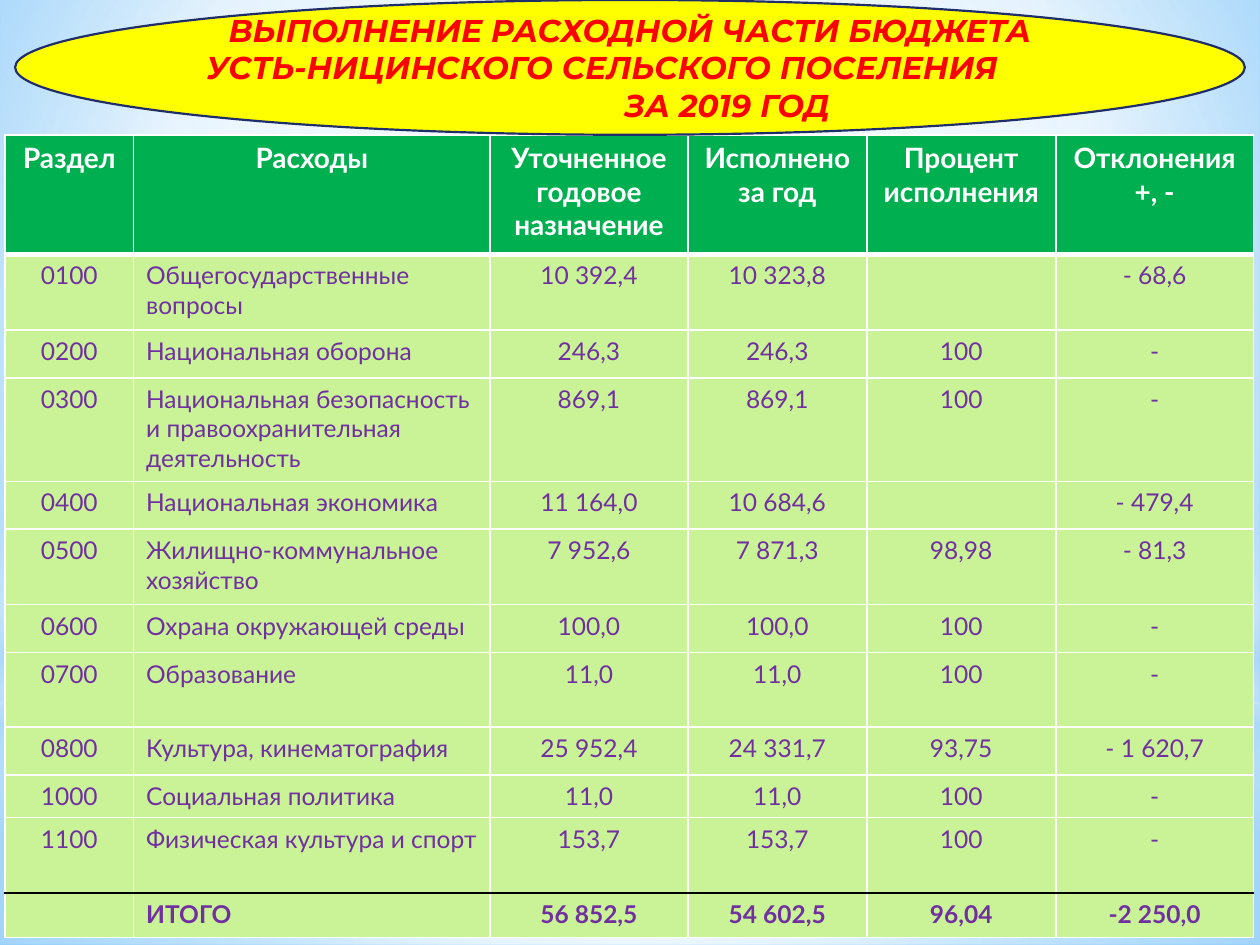
from dataclasses import dataclass

from lxml.etree import SubElement
from pptx import Presentation
from pptx.dml.color import RGBColor
from pptx.enum.shapes import MSO_SHAPE
from pptx.enum.text import MSO_ANCHOR, PP_ALIGN
from pptx.oxml import parse_xml
from pptx.oxml.ns import nsdecls, qn
from pptx.util import Inches, Pt

WHITE = RGBColor(0xFF, 0xFF, 0xFF)
BLACK = RGBColor(0x00, 0x00, 0x00)
SKY = RGBColor(0x9E, 0xD5, 0xFF)
BLUE = RGBColor(0x5B, 0xB9, 0xFF)
PALE_BLUE = RGBColor(0xB4, 0xDC, 0xFA)
GREEN = RGBColor(0x00, 0xB0, 0x50)
LIGHT_GREEN = RGBColor(0xCA, 0xF2, 0x97)
PURPLE = RGBColor(0x70, 0x30, 0xA0)
YELLOW = RGBColor(0xFF, 0xFF, 0x00)
NAVY = RGBColor(0x1F, 0x2E, 0x69)
RED = RGBColor(0xFF, 0x00, 0x00)


@dataclass(frozen=True)
class Stop:
    position: int
    color: RGBColor
    opacity: int = 100


@dataclass(frozen=True)
class Glow:
    kind: MSO_SHAPE
    top: float
    height: float
    stops: tuple[Stop, ...]
    circular: bool = True


@dataclass(frozen=True)
class TitleLine:
    text: str
    left_margin: float = 0
    right_margin: float = 0


BACKGROUND_STOPS = (Stop(0, SKY), Stop(60, WHITE), Stop(100, BLUE))
GLOWS = (
    Glow(MSO_SHAPE.RECTANGLE, 5.58, 1.92,
         (Stop(0, WHITE, 91), Stop(37, WHITE, 76), Stop(100, PALE_BLUE, 79))),
    Glow(MSO_SHAPE.RECTANGLE, 0, 5.58,
         (Stop(0, WHITE, 89), Stop(48, WHITE, 62), Stop(100, PALE_BLUE, 79))),
    Glow(MSO_SHAPE.RECTANGLE, 4.12, 2.5,
         (Stop(0, WHITE, 0), Stop(29, WHITE, 30), Stop(45, PALE_BLUE, 40),
          Stop(55, WHITE, 26), Stop(65, PALE_BLUE, 60), Stop(100, WHITE, 0)),
         circular=False),
    Glow(MSO_SHAPE.OVAL, 1.75, 5.58, (Stop(0, WHITE), Stop(56, WHITE, 0))),
)

TITLE_LINES = (
    TitleLine("ВЫПОЛНЕНИЕ РАСХОДНОЙ ЧАСТИ БЮДЖЕТА"),
    TitleLine("УСТЬ-НИЦИНСКОГО СЕЛЬСКОГО ПОСЕЛЕНИЯ", right_margin=0.44),
    TitleLine("ЗА 2019 ГОД", left_margin=1.54),
)

COLUMN_WIDTHS = (1.02, 2.83, 1.57, 1.42, 1.5, 1.57)
ROW_HEIGHTS = (0.95, 0.6, 0.38, 0.82, 0.38, 0.6, 0.38, 0.59, 0.38, 0.34, 0.6, 0.35)
ROWS = (
    ("Раздел", "Расходы", "Уточненное годовое назначение", "Исполнено за год",
     "Процент исполнения", "Отклонения +, -"),
    ("0100", "Общегосударственные вопросы", "10 392,4", "10 323,8", "", "- 68,6"),
    ("0200", "Национальная оборона", "246,3", "246,3", "100", "-"),
    ("0300", "Национальная безопасность и правоохранительная деятельность",
     "869,1", "869,1", "100", "-"),
    ("0400", "Национальная экономика", "11 164,0", "10 684,6", "", "- 479,4"),
    ("0500", "Жилищно-коммунальное хозяйство", "7 952,6", "7 871,3", "98,98", "- 81,3"),
    ("0600", "Охрана окружающей среды", "100,0", "100,0", "100", "-"),
    ("0700", "Образование", "11,0", "11,0", "100", "-"),
    ("0800", "Культура, кинематография", "25 952,4", "24 331,7", "93,75", "- 1 620,7"),
    ("1000", "Социальная политика", "11,0", "11,0", "100", "-"),
    ("1100", "Физическая культура и спорт", "153,7", "153,7", "100", "-"),
    ("", "ИТОГО", "56 852,5", "54 602,5", "96,04", "-2 250,0"),
)


def gradient(stops, center=(50, 50, 50, 50), circular=True):
    """Return a gradient fill; center gives left, top, right, bottom percents."""
    fill = parse_xml(f'<a:gradFill {nsdecls("a")} rotWithShape="1"/>')
    stop_list = SubElement(fill, qn("a:gsLst"))
    for stop in stops:
        item = SubElement(stop_list, qn("a:gs"), pos=str(stop.position * 1000))
        color = SubElement(item, qn("a:srgbClr"), val=str(stop.color))
        if stop.opacity < 100:
            SubElement(color, qn("a:alpha"), val=str(stop.opacity * 1000))
    if circular:
        focus = SubElement(fill, qn("a:path"), {"path": "circle"})
        sides = {side: str(value * 1000) for side, value in zip("ltrb", center)}
        SubElement(focus, qn("a:fillToRect"), sides)
    else:
        SubElement(fill, qn("a:lin"), ang="5400000", scaled="0")
    return fill


def add_background(slide) -> None:
    background = parse_xml(f'<p:bg {nsdecls("p", "a")}><p:bgPr/></p:bg>')
    background[0].append(gradient(BACKGROUND_STOPS, (20, 10, 20, 60)))
    SubElement(background[0], qn("a:effectLst"))
    slide.element.cSld.insert(0, background)


def add_glow(slide, glow: Glow) -> None:
    shape = slide.shapes.add_shape(
        glow.kind, 0, Inches(glow.top), Inches(10), Inches(glow.height))
    shape.shadow.inherit = False
    shape.line.fill.background()
    properties = shape.element.spPr
    geometry = properties.find(qn("a:prstGeom"))
    geometry.addnext(gradient(glow.stops, circular=glow.circular))


def write(paragraph, text: str, *, font: str, size: float, color: RGBColor,
          bold: bool = False, italic: bool = False,
          alignment: PP_ALIGN = PP_ALIGN.CENTER) -> None:
    paragraph.alignment = alignment
    if not text:
        paragraph._p.get_or_add_endParaRPr().set("sz", str(int(size * 100)))
        return
    run = paragraph.add_run()
    run.text = text
    run.font.name = font
    run.font.size = Pt(size)
    run.font.color.rgb = color
    run.font.bold = bold
    run.font.italic = italic


def set_borders(cell, *, top: RGBColor, bottom: RGBColor,
                top_width: float, bottom_width: float) -> None:
    borders = (("L", WHITE, 1), ("R", WHITE, 1),
               ("T", top, top_width), ("B", bottom, bottom_width))
    properties = cell._tc.get_or_add_tcPr()
    for index, (side, color, width) in enumerate(borders):
        properties.insert(index, parse_xml(
            f'<a:ln{side} {nsdecls("a")} w="{Pt(width)}"><a:solidFill>'
            f'<a:srgbClr val="{color}"/></a:solidFill></a:ln{side}>'))


def add_budget_table(slide) -> None:
    table = slide.shapes.add_table(
        len(ROWS), len(COLUMN_WIDTHS), Inches(0.04), Inches(1.07),
        Inches(sum(COLUMN_WIDTHS)), Inches(sum(ROW_HEIGHTS))).table
    table.horz_banding = False
    for column, width in zip(table.columns, COLUMN_WIDTHS):
        column.width = Inches(width)
    total = len(ROWS) - 1
    for row_index, (texts, height) in enumerate(zip(ROWS, ROW_HEIGHTS)):
        table.rows[row_index].height = Inches(height)
        header = row_index == 0
        for column_index, text in enumerate(texts):
            cell = table.cell(row_index, column_index)
            cell.fill.solid()
            cell.fill.fore_color.rgb = GREEN if header else LIGHT_GREEN
            set_borders(cell,
                        top=BLACK if row_index == total else WHITE,
                        bottom=BLACK if row_index == total - 1 else WHITE,
                        top_width=3 if row_index == 1 else 1,
                        bottom_width=3 if header else 1)
            is_name = column_index == 1 and not header
            write(cell.text_frame.paragraphs[0], text, font="Lato",
                  size=16 if header else 14, color=WHITE if header else PURPLE,
                  bold=row_index in (0, total),
                  alignment=PP_ALIGN.LEFT if is_name else PP_ALIGN.CENTER)


def add_title(slide) -> None:
    shape = slide.shapes.add_shape(
        MSO_SHAPE.OVAL, Inches(0.12), 0, Inches(9.76), Inches(1.07))
    shape.shadow.inherit = False
    shape.fill.solid()
    shape.fill.fore_color.rgb = YELLOW
    shape.line.color.rgb = NAVY
    shape.line.width = Pt(1.25)
    frame = shape.text_frame
    frame.word_wrap = True
    frame.vertical_anchor = MSO_ANCHOR.MIDDLE
    frame.margin_left = frame.margin_right = 0
    for index, line in enumerate(TITLE_LINES):
        paragraph = frame.add_paragraph() if index else frame.paragraphs[0]
        write(paragraph, line.text, font="Montserrat", size=18, color=RED,
              bold=True, italic=True)
        properties = paragraph._p.get_or_add_pPr()
        properties.set("marL", str(Inches(line.left_margin)))
        properties.set("marR", str(Inches(line.right_margin)))


def main() -> None:
    presentation = Presentation()
    presentation.slide_width = Inches(10)
    presentation.slide_height = Inches(7.5)
    slide = presentation.slides.add_slide(presentation.slide_layouts[6])

    # Soft sky backdrop
    add_background(slide)
    for glow in GLOWS:
        add_glow(slide, glow)

    # Budget figures and title
    add_budget_table(slide)
    add_title(slide)
    presentation.save("out.pptx")


if __name__ == "__main__":
    main()
